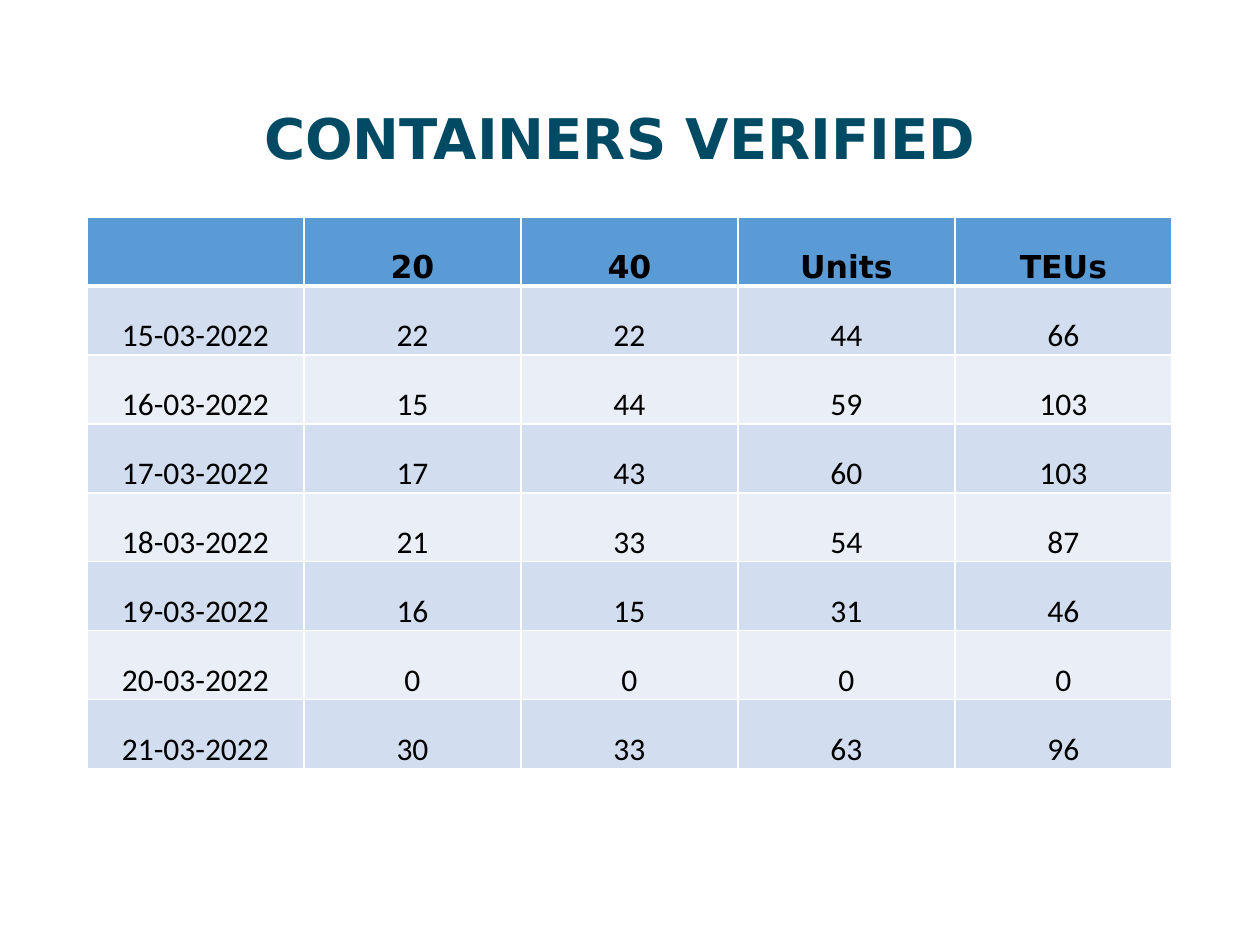
from dataclasses import dataclass

from lxml.etree import SubElement
from pptx import Presentation
from pptx.dml.color import RGBColor
from pptx.enum.text import MSO_ANCHOR, PP_ALIGN
from pptx.oxml.ns import qn
from pptx.util import Pt

PX = 914400 // 126  # EMU in one px


@dataclass(frozen=True)
class Theme:
    title_font: str = "DejaVu Sans"
    body_font: str = "Calibri"
    title_size: int = 32
    cell_size: int = 18
    title: str = "004A64"
    text: str = "000000"
    header: str = "5B9BD5"
    bands: tuple = ("D2DEEF", "EAEFF7")
    border: str = "FFFFFF"


THEME = Theme()
TITLE_BOX = (87, 50, 1086, 183)
TABLE_BOX = (87, 217, 1085, 552)
HEADER = ("", "20", "40", "Units", "TEUs")
DAYS = (
    ("15-03-2022", 22, 22, 44, 66),
    ("16-03-2022", 15, 44, 59, 103),
    ("17-03-2022", 17, 43, 60, 103),
    ("18-03-2022", 21, 33, 54, 87),
    ("19-03-2022", 16, 15, 31, 46),
    ("20-03-2022", 0, 0, 0, 0),
    ("21-03-2022", 30, 33, 63, 96),
)


def px(*lengths):
    return [n * PX for n in lengths]


def write(tf, text, *, font, size, color, bold=False, spacing=None):
    p = tf.paragraphs[0]
    p.alignment = PP_ALIGN.CENTER
    p.line_spacing = spacing
    p.font.size = Pt(size)
    if text:
        r = p.add_run()
        r.text = text
        r.font.name = font
        r.font.size = Pt(size)
        r.font.bold = bold
        r.font.color.rgb = RGBColor.from_string(color)


def set_borders(cell, widths):
    """Draw cell borders; widths maps each side (L, R, T, B) to points."""
    tcPr = cell._tc.get_or_add_tcPr()
    for side, width in widths.items():
        ln = SubElement(tcPr, qn(f"a:ln{side}"), w=str(Pt(width)))
        fill = SubElement(ln, qn("a:solidFill"))
        SubElement(fill, qn("a:srgbClr"), val=THEME.border)


def place_title(slide, box):
    sp = slide.shapes.title
    sp.left, sp.top, sp.width, sp.height = px(*box)
    tf = sp.text_frame
    tf.word_wrap = True
    tf.vertical_anchor = MSO_ANCHOR.MIDDLE
    write(tf, "CONTAINERS VERIFIED ", font=THEME.title_font,
          size=THEME.title_size, color=THEME.title, bold=True, spacing=0.9)


def format_cell(cell, text, row):
    is_header = row == 0
    cell.margin_left = cell.margin_right = cell.margin_top = PX
    cell.margin_bottom = 0
    cell.vertical_anchor = MSO_ANCHOR.BOTTOM
    set_borders(cell, {"L": 1, "R": 1, "T": 3 if row == 1 else 1,
                       "B": 3 if is_header else 1})
    cell.fill.solid()
    color = THEME.header if is_header else THEME.bands[(row - 1) % 2]
    cell.fill.fore_color.rgb = RGBColor.from_string(color)
    write(cell.text_frame, text, size=THEME.cell_size, color=THEME.text,
          font=THEME.title_font if is_header else THEME.body_font,
          bold=is_header)


def place_table(slide, box):
    rows = (HEADER, *DAYS)
    table = slide.shapes.add_table(len(rows), len(HEADER), *px(*box)).table
    for column in table.columns:
        column.width = box[2] // len(HEADER) * PX
    for i, values in enumerate(rows):
        table.rows[i].height = box[3] // len(rows) * PX
        for j, value in enumerate(values):
            format_cell(table.cell(i, j), str(value), i)


def main():
    prs = Presentation()
    prs.slide_width, prs.slide_height = px(1260, 945)
    slide = prs.slides.add_slide(prs.slide_layouts[5])
    place_title(slide, TITLE_BOX)
    place_table(slide, TABLE_BOX)
    prs.save("out.pptx")


if __name__ == "__main__":
    main()
